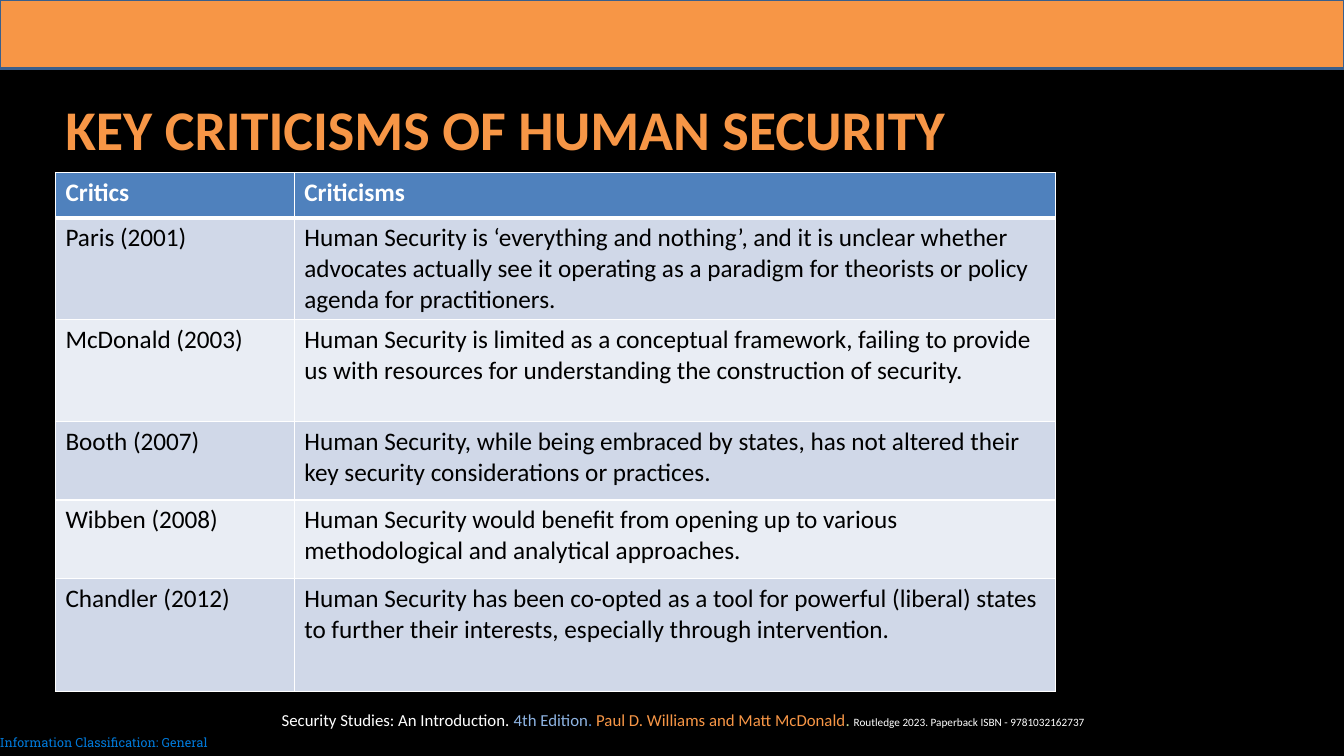
from dataclasses import dataclass

from lxml.etree import SubElement
from pptx import Presentation
from pptx.dml.color import RGBColor
from pptx.enum.shapes import MSO_SHAPE
from pptx.enum.text import MSO_ANCHOR, PP_ALIGN
from pptx.oxml.ns import qn
from pptx.util import Pt

ORANGE = "F79646"
WHITE = "FFFFFF"
BLACK = "000000"
HEADER_BLUE = "4F81BD"
BAND_COLORS = ("D0D8E8", "E9EDF4")


@dataclass
class Phrase:
    text: str
    size: float
    color: str
    bold: bool = False
    font: str = "Calibri"


@dataclass
class Label:
    left: float
    top: float
    width: float
    height: float
    phrases: list[Phrase]
    inset: tuple[float, float] = (7.2, 3.6)
    anchor: MSO_ANCHOR = MSO_ANCHOR.MIDDLE
    align: PP_ALIGN = PP_ALIGN.LEFT
    line_spacing: float = 1.0


@dataclass
class Row:
    height: float
    critic: str
    criticism: str


LABELS = [
    Label(39.6, 59.76, 729.36, 69.84,
          [Phrase("KEY CRITICISMS OF HUMAN SECURITY", 40, ORANGE, True)],
          line_spacing=0.9),
    Label(4.32, 507, 967.68, 24, [
        Phrase("Security Studies: An Introduction. ", 12, WHITE),
        Phrase("4th Edition", 12, "8EB4E3"),
        Phrase(". ", 12, "558ED5"),
        Phrase("Paul D. Williams and Matt McDonald", 12, ORANGE),
        Phrase(". ", 12, "C3D69B"),
        Phrase("Routledge 2023. Paperback ISBN - 9781032162737", 8, WHITE),
    ], inset=(7.2, 0), anchor=MSO_ANCHOR.TOP, align=PP_ALIGN.CENTER),
    Label(0, 521.28, 167.76, 18.72,
          [Phrase("Information Classification: General", 9, "0078D7", font="Roboto Slab")],
          inset=(0, 0)),
]

COLUMN_WIDTHS = (170.64, 543.6)
ROWS = [
    Row(32.4, "Critics", "Criticisms"),
    Row(72.72, "Paris (2001)",
        "Human Security is ‘everything and nothing’, and it is unclear whether advocates "
        "actually see it operating as a paradigm for theorists or policy agenda for practitioners."),
    Row(72.72, "McDonald (2003)",
        "Human Security is limited as a conceptual framework, failing to provide us with "
        "resources for understanding the construction of security."),
    Row(56.16, "Booth (2007)",
        "Human Security, while being embraced by states, has not altered their key security "
        "considerations or practices."),
    Row(56.16, "Wibben (2008)",
        "Human Security would benefit from opening up to various methodological and "
        "analytical approaches."),
    Row(80.64, "Chandler (2012)",
        "Human Security has been co-opted as a tool for powerful (liberal) states to further "
        "their interests, especially through intervention."),
]


def rgb(color: str) -> RGBColor:
    return RGBColor.from_string(color)


def set_fill(target, color: str) -> None:
    target.fill.solid()
    target.fill.fore_color.rgb = rgb(color)


def format_font(font, phrase: Phrase) -> None:
    font.name = phrase.font
    font.size = Pt(phrase.size)
    font.bold = phrase.bold
    font.color.rgb = rgb(phrase.color)


def add_label(slide, label: Label) -> None:
    shape = slide.shapes.add_textbox(
        Pt(label.left), Pt(label.top), Pt(label.width), Pt(label.height))
    text_frame = shape.text_frame
    text_frame.word_wrap = True
    text_frame.vertical_anchor = label.anchor
    horizontal, vertical = label.inset
    text_frame.margin_left = text_frame.margin_right = Pt(horizontal)
    text_frame.margin_top = text_frame.margin_bottom = Pt(vertical)
    paragraph = text_frame.paragraphs[0]
    paragraph.alignment = label.align
    paragraph.line_spacing = label.line_spacing
    for phrase in label.phrases:
        run = paragraph.add_run()
        run.text = phrase.text
        format_font(run.font, phrase)


def set_borders(cell, top: float, bottom: float) -> None:
    properties = cell._tc.get_or_add_tcPr()
    for side, width in (("L", 1), ("R", 1), ("T", top), ("B", bottom)):
        line = SubElement(properties, qn(f"a:ln{side}"), w=str(Pt(width)))
        fill = SubElement(line, qn("a:solidFill"))
        SubElement(fill, qn("a:srgbClr"), val=WHITE)


def add_criticism_table(slide) -> None:
    table = slide.shapes.add_table(
        len(ROWS), len(COLUMN_WIDTHS), Pt(39.6), Pt(123.12),
        Pt(sum(COLUMN_WIDTHS)), Pt(sum(row.height for row in ROWS))).table
    for column, width in zip(table.columns, COLUMN_WIDTHS):
        column.width = Pt(width)
    for row_index, row in enumerate(ROWS):
        table.rows[row_index].height = Pt(row.height)
        is_header = row_index == 0
        fill_color = HEADER_BLUE if is_header else BAND_COLORS[(row_index - 1) % 2]
        for column_index, text in enumerate((row.critic, row.criticism)):
            cell = table.cell(row_index, column_index)
            set_borders(cell, 3 if row_index == 1 else 1, 3 if is_header else 1)
            set_fill(cell, fill_color)
            cell.text_frame.text = text
            phrase = Phrase(text, 18, WHITE if is_header else BLACK, is_header)
            format_font(cell.text_frame.paragraphs[0].runs[0].font, phrase)


def main() -> None:
    presentation = Presentation()
    presentation.slide_width = Pt(960)
    presentation.slide_height = Pt(540)
    slide = presentation.slides.add_slide(presentation.slide_layouts[6])
    set_fill(slide.background, BLACK)

    # Top band
    band = slide.shapes.add_shape(MSO_SHAPE.RECTANGLE, Pt(0), Pt(0), Pt(960), Pt(48.96))
    band.shadow.inherit = False
    set_fill(band, ORANGE)
    band.line.color.rgb = rgb("3A5F8C")
    band.line.width = Pt(1.5)

    # Title and footer lines
    for label in LABELS:
        add_label(slide, label)

    # Critics and their criticisms
    add_criticism_table(slide)
    presentation.save("out.pptx")


if __name__ == "__main__":
    main()
